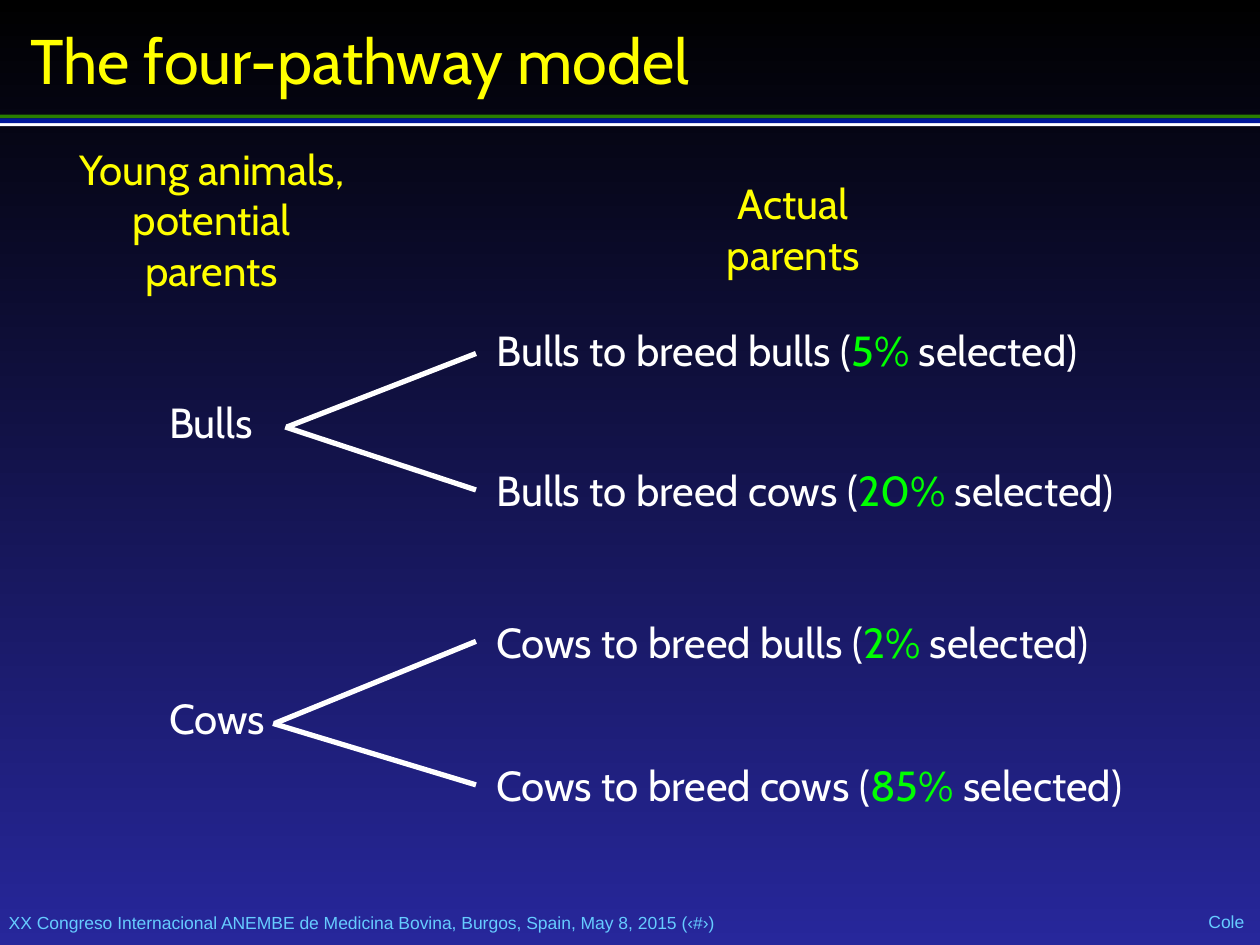
from pptx import Presentation
from pptx.dml.color import RGBColor
from pptx.enum.shapes import MSO_CONNECTOR, MSO_SHAPE
from pptx.enum.text import MSO_ANCHOR, MSO_AUTO_SIZE, PP_ALIGN
from pptx.oxml.ns import qn
from pptx.util import Pt
from lxml import etree

BLACK = RGBColor(0x00, 0x00, 0x00)
NAVY = RGBColor(0x27, 0x27, 0x9B)
WHITE = RGBColor(0xFF, 0xFF, 0xFF)
YELLOW = RGBColor(0xFF, 0xFF, 0x00)
LIME = RGBColor(0x00, 0xFF, 0x00)
SKY = RGBColor(0x66, 0xCC, 0xFF)
GREEN = RGBColor(0x2A, 0x7E, 0x00)
BLUE = RGBColor(0x00, 0x17, 0x99)

LEFT, CENTER = PP_ALIGN.LEFT, PP_ALIGN.CENTER
TOP, MIDDLE = MSO_ANCHOR.TOP, MSO_ANCHOR.MIDDLE
GROW, FIXED = MSO_AUTO_SIZE.SHAPE_TO_FIT_TEXT, MSO_AUTO_SIZE.NONE
RECTANGLE = MSO_SHAPE.RECTANGLE
STRAIGHT = MSO_CONNECTOR.STRAIGHT

SLIDE_WIDTH, SLIDE_HEIGHT = 720, 540
LABEL_HEIGHT = 36
PARENT_X, OUTCOME_X, BRANCH_END_X = 93, 280, 272
TIP_OFFSET = 21

# name, top, label width, then per pathway:
# offspring, share, text top, text width, branch start x, branch end y
PATHWAYS = [
    ("Bulls", 223, 58, [("bulls", "5%", 182, 373, 164, 202),
                        ("cows", "20%", 262, 395, 163, 280)]),
    ("Cows", 392.4, 63, [("bulls", "2%", 348.5, 372, 157, 366.5),
                         ("cows", "85%", 430.5, 387, 156, 448.5)]),
]


def paint_background(slide):
    fill = slide.background.fill
    fill.gradient()
    fill.gradient_angle = 270
    for stop, color in zip(fill.gradient_stops, (BLACK, NAVY)):
        stop.color.rgb = color


def add_stripe(slide, top, height, color):
    stripe = slide.shapes.add_shape(RECTANGLE, 0, Pt(top), Pt(SLIDE_WIDTH), Pt(height))
    stripe.shadow.inherit = False
    stripe.fill.solid()
    stripe.fill.fore_color.rgb = color
    stripe.line.fill.background()


def add_text(slide, box, lines, color=WHITE, size=24, font="Cabin", align=LEFT,
             anchor=TOP, inset=3.6, wrap=False, autosize=GROW, space_before=0):
    """Add a text box; each line is a list of (text, colour or None) runs."""
    frame = slide.shapes.add_textbox(*map(Pt, box)).text_frame
    frame.word_wrap = wrap
    frame.auto_size = autosize
    frame.vertical_anchor = anchor
    frame.margin_left = frame.margin_right = Pt(inset)
    frame.margin_top = frame.margin_bottom = Pt(inset)
    for index, parts in enumerate(lines):
        paragraph = frame.add_paragraph() if index else frame.paragraphs[0]
        paragraph.alignment = align
        paragraph.space_before = Pt(space_before)
        for text, accent in parts:
            run = paragraph.add_run()
            run.text = text
            run.font.size = Pt(size)
            run.font.name = font
            run.font.color.rgb = accent or color


def add_heading(slide, box, *lines):
    add_text(slide, box, [[(line, None)] for line in lines], YELLOW, align=CENTER)


def add_footer(slide, box, text, **layout):
    add_text(slide, box, [[(text, None)]], SKY, 10, "Arial", anchor=MIDDLE,
             inset=0, space_before=6, **layout)


def add_branch(slide, start_x, start_y, end_y):
    branch = slide.shapes.add_connector(
        STRAIGHT, Pt(BRANCH_END_X), Pt(end_y), Pt(start_x), Pt(start_y))
    branch.line.color.rgb = WHITE
    branch.line.width = Pt(3)
    etree.SubElement(branch.line._get_or_add_ln().getparent(), qn("a:effectLst"))


def add_pathways(slide, parent, top, width, outcomes):
    add_text(slide, (PARENT_X, top, width, LABEL_HEIGHT), [[(parent, None)]])
    for offspring, share, text_top, text_width, start_x, end_y in outcomes:
        add_branch(slide, start_x, top + TIP_OFFSET, end_y)
        add_text(slide, (OUTCOME_X, text_top, text_width, LABEL_HEIGHT),
                 [[(f"{parent} to breed {offspring} (", None),
                   (share, LIME), (" selected)", None)]])


def main():
    deck = Presentation()
    deck.slide_width, deck.slide_height = Pt(SLIDE_WIDTH), Pt(SLIDE_HEIGHT)
    slide = deck.slides.add_slide(deck.slide_layouts[6])
    paint_background(slide)

    for top, height, color in ((65.5, 2.2, GREEN), (70, 2.2, WHITE), (67.7, 2.7, BLUE)):
        add_stripe(slide, top, height, color)
    add_footer(slide, (690, 521, 21.6, 11), "Cole", align=CENTER)
    add_footer(slide, (5, 521, 582.5, 12),
               "XX Congreso Internacional ANEMBE de Medicina Bovina, "
               "Burgos, Spain, May 8, 2015 (‹#›)", wrap=True)

    add_text(slide, (13.7, 10.8, 648, 46), [[("The four-pathway model", None)]],
             YELLOW, 36, anchor=MIDDLE, wrap=True, autosize=FIXED)
    add_heading(slide, (35.3, 78.5, 171.4, 94.3), "Young animals,", "potential", "parents")
    add_heading(slide, (409, 98, 88.6, 65.5), "Actual", "parents")
    for pathway in PATHWAYS:
        add_pathways(slide, *pathway)

    deck.save("out.pptx")


if __name__ == "__main__":
    main()
